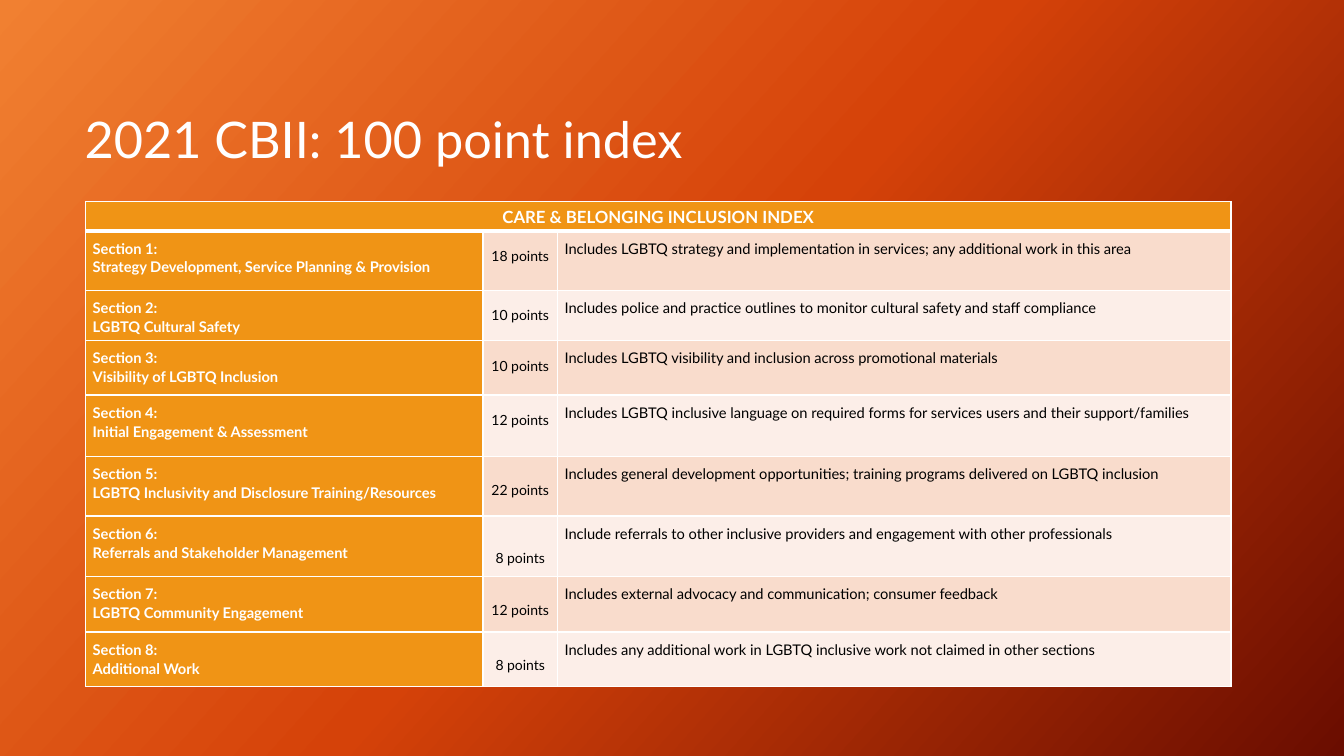
from lxml import etree
from pptx import Presentation
from pptx import util as u
from pptx.dml.color import RGBColor
from pptx.enum import text
from pptx.oxml.ns import qn

WHITE = RGBColor(0xFF, 0xFF, 0xFF)
BLACK = RGBColor(0, 0, 0)
AMBER = RGBColor(0xF0, 0x94, 0x15)
BANDS = RGBColor(0xF9, 0xDC, 0xCC), RGBColor(0xFC, 0xEE, 0xE8)
GLOW = (0, "F18031"), (50, "D54209"), (100, "6A0D00")
FONT = "Lato"
CENTER = text.PP_ALIGN.CENTER

COLS = 3.94, 0.74, 6.68
ROWS = 0.29, 0.59, 0.5, 0.54, 0.61, 0.59, 0.6, 0.55, 0.54
HEAD = "CARE & BELONGING INCLUSION INDEX"
# Section name, points, line spacing of the points, description
PARTS = [
    ("Strategy Development, Service Planning & Provision", 18, 2,
     "Includes LGBTQ strategy and implementation in services; any additional work in this area"),
    ("LGBTQ Cultural Safety", 10, 2,
     "Includes police and practice outlines to monitor cultural safety and staff compliance"),
    ("Visibility of LGBTQ Inclusion", 10, 2,
     "Includes LGBTQ visibility and inclusion across promotional materials"),
    ("Initial Engagement & Assessment", 12, 2,
     "Includes LGBTQ inclusive language on required forms for services users and their support/families"),
    ("LGBTQ Inclusivity and Disclosure Training/Resources", 22, 2.5,
     "Includes general development opportunities; training programs delivered on LGBTQ inclusion"),
    ("Referrals and Stakeholder Management", 8, 3,
     "Include referrals to other inclusive providers and engagement with other professionals"),
    ("LGBTQ Community Engagement", 12, 2.5,
     "Includes external advocacy and communication; consumer feedback"),
    ("Additional Work", 8, 2.5,
     "Includes any additional work in LGBTQ inclusive work not claimed in other sections"),
]


def write(para, words, size, color, bold=False, gap=1.0, align=None):
    para.line_spacing = gap
    para.alignment = align
    run = para.add_run()
    run.text = words
    font = run.font
    font.name, font.size, font.bold = FONT, u.Pt(size), bold
    font.color.rgb = color


def style(cell, fill, top=1, base=1):
    """Set the borders, the fill and the margins of a cell."""
    props = cell._tc.get_or_add_tcPr()
    for side, width in zip("LRTB", (1, 1, top, base)):
        line = etree.SubElement(props, qn("a:ln" + side), w=str(u.Pt(width)))
        solid = etree.SubElement(line, qn("a:solidFill"))
        etree.SubElement(solid, qn("a:srgbClr"), val=str(WHITE))
    cell.fill.solid()
    cell.fill.fore_color.rgb = fill
    cell.margin_left = cell.margin_right = u.Inches(0.07)
    cell.margin_top = cell.margin_bottom = 0


def backdrop(slide):
    fill = slide.background.fill
    fill.gradient()
    fill.gradient_angle = 318
    stops = slide.element.find(".//" + qn("a:gsLst"))
    for stop in list(stops):
        stops.remove(stop)
    for share, color in GLOW:
        stop = etree.SubElement(stops, qn("a:gs"), pos=str(share * 1000))
        etree.SubElement(stop, qn("a:srgbClr"), val=color)


def title(slide, box):
    frame = slide.shapes.add_textbox(*map(u.Inches, box)).text_frame
    frame.word_wrap = True
    frame.vertical_anchor = text.MSO_ANCHOR.MIDDLE
    write(frame.paragraphs[0], "2021 CBII: 100 point index", 36, WHITE, gap=0.9)


def index(slide, left, top):
    box = map(u.Inches, (left, top, sum(COLS), sum(ROWS)))
    table = slide.shapes.add_table(len(ROWS), len(COLS), *box).table
    for col, width in zip(table.columns, COLS):
        col.width = u.Inches(width)
    for row, height in zip(table.rows, ROWS):
        row.height = u.Inches(height)

    # Heading across all columns
    for cell in table.rows[0].cells:
        style(cell, AMBER, base=3)
    head = table.cell(0, 0)
    head.merge(table.cell(0, len(COLS) - 1))
    head.vertical_anchor = text.MSO_ANCHOR.MIDDLE
    write(head.text_frame.paragraphs[0], HEAD, 12, WHITE, True, 1.07, CENTER)

    # One row for each section
    for num, (name, points, gap, about) in enumerate(PARTS, 1):
        band = BANDS[(num - 1) % 2]
        cells = [table.cell(num, col) for col in range(len(COLS))]
        for cell, fill in zip(cells, (AMBER, band, band)):
            style(cell, fill, top=3 if num == 1 else 1)
        label, score, note = (cell.text_frame for cell in cells)
        write(label.paragraphs[0], f"Section {num}:", 10.5, WHITE, True, 1.5)
        write(label.add_paragraph(), name, 10.5, WHITE, True, 1.07)
        write(score.paragraphs[0], f"{points} points", 10, BLACK, gap=float(gap), align=CENTER)
        write(note.paragraphs[0], about, 10.5, BLACK, gap=1.5)


def main():
    deck = Presentation()
    deck.slide_width, deck.slide_height = u.Inches(13.33), u.Inches(7.5)
    slide = deck.slides.add_slide(deck.slide_layouts[6])
    backdrop(slide)
    title(slide, (0.74, 0.82, 10.51, 1.18))
    index(slide, 0.85, 2)
    deck.save("out.pptx")


if __name__ == "__main__":
    main()
